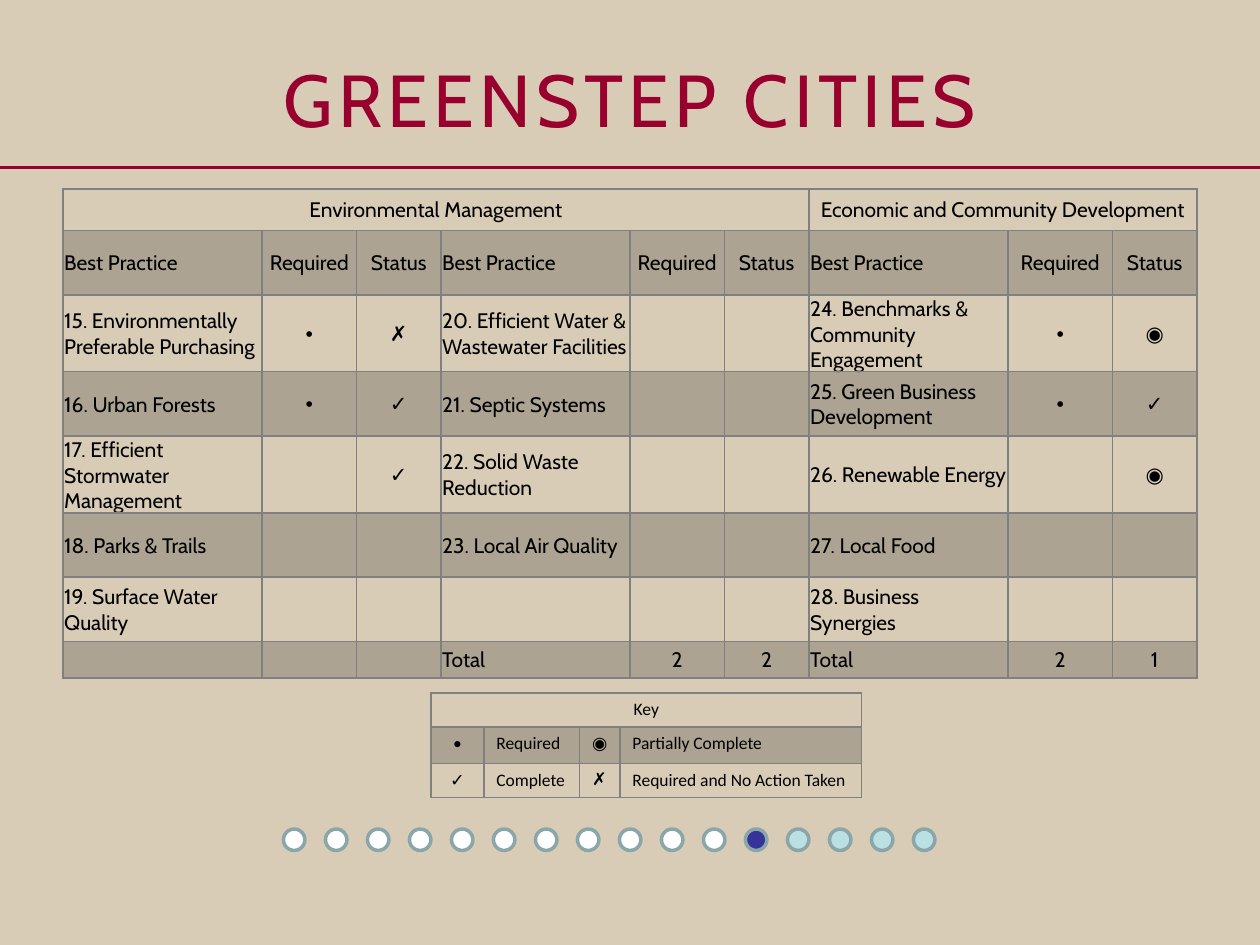
from pptx import Presentation
from pptx.dml.color import RGBColor
from pptx.enum.shapes import MSO_CONNECTOR as Conn, MSO_SHAPE as Shape
from pptx.enum.text import MSO_ANCHOR as Anchor, PP_ALIGN as Align
from pptx.oxml import parse_xml
from pptx.oxml.ns import nsdecls, qn
from pptx.util import Inches, Pt


def rgb(code):
    return RGBColor.from_string(code)


def add_grid(x, y, cols, rows, data, spans, size, inset, anchor, style):
    """Add a bordered table; every second row is shaded."""
    frame = slide.shapes.add_table(len(rows), len(cols), Inches(x), Inches(y),
                                   Inches(sum(cols)), Inches(sum(rows)))
    table = frame.table
    table.first_row = table.horz_banding = False
    for col, width in zip(table.columns, cols):
        col.width = Inches(width)
    for row, height in zip(table.rows, rows):
        row.height = Inches(height)
    for first, last in spans:
        table.cell(0, first).merge(table.cell(0, last))

    for r, texts in enumerate(data):
        for c, text in enumerate(texts):
            cell = table.cell(r, c)
            (cell.margin_left, cell.margin_top,
             cell.margin_right, cell.margin_bottom) = map(Inches, inset)
            cell.vertical_anchor = anchor
            cell.text = text
            para = cell.text_frame.paragraphs[0]
            para.alignment, para.font.name = style(r, c, text)
            para.font.size = Pt(size)
            para.font.color.rgb = rgb("000000")

            # Borders go before the fill
            props = cell._tc.get_or_add_tcPr()
            for side in "LRTB":
                props.append(parse_xml(
                    f'<a:ln{side} {nsdecls("a")} w="12700"><a:solidFill>'
                    f'<a:srgbClr val="808080"/></a:solidFill></a:ln{side}>'))
            if r % 2:
                cell.fill.solid()
                cell.fill.fore_color.rgb = rgb("000000")
                tint = props.find(qn("a:solidFill"))[0]
                tint.append(parse_xml(f'<a:alpha {nsdecls("a")} val="20000"/>'))
            else:
                cell.fill.background()


prs = Presentation()
prs.slide_width, prs.slide_height = Inches(10), Inches(7.5)
slide = prs.slides.add_slide(prs.slide_layouts[6])
slide.background.fill.solid()
slide.background.fill.fore_color.rgb = rgb("D8CCB7")

# Rule under the title
rule = slide.shapes.add_connector(Conn.STRAIGHT, Inches(0), Inches(1.33),
                                  Inches(10), Inches(1.33))
rule.line.color.rgb = rgb("98002E")
rule.line.width = Pt(1.5)
rule._element.spPr.append(parse_xml(f'<a:effectLst {nsdecls("a")}/>'))

# Title
box = slide.shapes.add_textbox(Inches(0.5), Inches(0.3), Inches(9), Inches(0.95))
box.text_frame.word_wrap = True
box.text_frame.vertical_anchor = Anchor.MIDDLE
para = box.text_frame.paragraphs[0]
para.alignment = Align.CENTER
run = para.add_run()
run.text = "GREENSTEP CITIES"
run._r.get_or_add_rPr().set("spc", "300")
para.font.name = "Cabin"
para.font.size = Pt(42)
para.font.color.rgb = rgb("98002E")

# Best practices
marks = "•✓✗◉"
heads = ["Best Practice", "Required", "Status"]
data = [
    ["Environmental Management", "", "", "", "", "",
     "Economic and Community Development", "", ""],
    heads * 3,
    ["15. Environmentally Preferable Purchasing", "•", "✗",
     "20. Efficient Water & Wastewater Facilities", "", "",
     "24. Benchmarks & Community Engagement", "•", "◉"],
    ["16. Urban Forests", "•", "✓", "21. Septic Systems", "", "",
     "25. Green Business Development", "•", "✓"],
    ["17. Efficient Stormwater Management", "", "✓",
     "22. Solid Waste Reduction", "", "", "26. Renewable Energy", "", "◉"],
    ["18. Parks & Trails", "", "", "23. Local Air Quality", "", "",
     "27. Local Food", "", ""],
    ["19. Surface Water Quality", "", "", "", "", "",
     "28. Business Synergies", "", ""],
    ["", "", "", "Total", "2", "2", "Total", "2", "1"],
]
add_grid(0.5, 1.5, [1.58, 0.75, 0.67, 1.5, 0.75, 0.67, 1.58, 0.83, 0.67],
         [0.33, 0.51, 0.61, 0.51, 0.61, 0.51, 0.51, 0.29], data,
         [(0, 5), (6, 8)], 12, (0.01, 0.01, 0.01, 0), Anchor.MIDDLE,
         lambda r, c, text: (Align.CENTER if r == 0 or c % 3 else Align.LEFT,
                             "Arial" if text and text in marks else "Cabin"))

# Key
data = [
    ["Key", "", "", ""],
    ["•", "Required", "◉", "Partially Complete"],
    ["✓", "Complete", "✗", "Required and No Action Taken"],
]
add_grid(3.42, 5.5, [0.42, 0.76, 0.32, 1.92], [0.27, 0.29, 0.27], data,
         [(0, 3)], 10, (0.1, 0.05, 0.1, 0.05), Anchor.TOP,
         lambda r, c, text: (Align.LEFT if c else Align.CENTER,
                             "Arial" if r and c == 2 else "Calibri"))

# Progress dots: done, current, to come
dots = slide.shapes.add_group_shape().shapes
for i, fill in enumerate(["FFFFFF"] * 11 + ["333399"] + ["BBE0E3"] * 4):
    dot = dots.add_shape(Shape.OVAL, Inches(2.25 + i / 3), Inches(6.58),
                         Inches(0.17), Inches(0.17))
    dot.shadow.inherit = False
    dot.fill.solid()
    dot.fill.fore_color.rgb = rgb(fill)
    dot.line.color.rgb = rgb("8AA6A8")
    dot.line.width = Pt(2)

prs.save("out.pptx")
